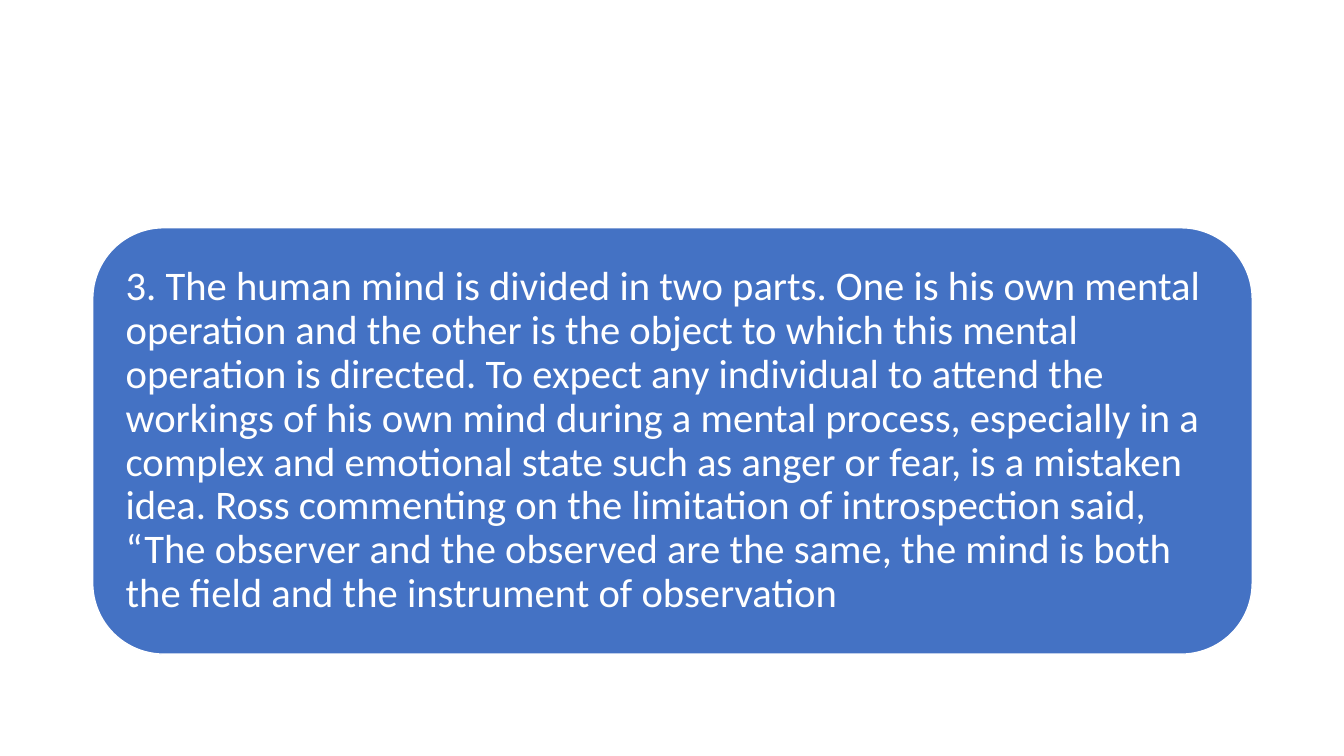
from pptx import Presentation
from pptx import util as u
from pptx.dml.color import RGBColor
from pptx.enum import shapes, text

BLUE = RGBColor(0x44, 0x72, 0xC4)
WHITE = RGBColor(0xFF, 0xFF, 0xFF)

LIMITATION = (
    "3. The human mind is divided in two parts. One is his own mental operation "
    "and the other is the object to which this mental operation is directed. "
    "To expect any individual to attend the workings of his own mind during a "
    "mental process, especially in a complex and emotional state such as anger "
    "or fear, is a mistaken idea. Ross commenting on the limitation of "
    "introspection said, “The observer and the observed are the same, the mind "
    "is both the field and the instrument of observation"
)


def apply(target, values):
    for name, value in values.items():
        setattr(target, name, value)


class SlideBuilder:
    frame_format = {
        "word_wrap": True,
        "vertical_anchor": text.MSO_ANCHOR.MIDDLE,
        **{f"margin_{side}": u.Inches(0.12) for side in ("left", "top", "right", "bottom")},
    }
    para_format = {"alignment": text.PP_ALIGN.LEFT, "line_spacing": 0.9}
    font_format = {"name": "Calibri", "size": u.Pt(29)}

    def __init__(self, page):
        self.page = page

    def rounded_box(self, left, top, width, height, wording):
        box = self.page.shapes.add_shape(
            shapes.MSO_SHAPE.ROUNDED_RECTANGLE,
            u.Inches(left), u.Inches(top), u.Inches(width), u.Inches(height),
        )
        box.shadow.inherit = False
        box.fill.solid()
        box.fill.fore_color.rgb = BLUE
        box.line.color.rgb = WHITE
        box.line.width = u.Pt(1)
        apply(box.text_frame, self.frame_format)
        para = box.text_frame.paragraphs[0]
        apply(para, self.para_format)
        span = para.add_run()
        span.text = wording
        apply(span.font, self.font_format)
        span.font.color.rgb = WHITE


def main():
    deck = Presentation()
    deck.slide_width = u.Inches(13.33)
    deck.slide_height = u.Inches(7.5)
    builder = SlideBuilder(deck.slides.add_slide(deck.slide_layouts[6]))
    builder.rounded_box(0.92, 2.26, 11.5, 4.23, LIMITATION)
    deck.save("out.pptx")


if __name__ == "__main__":
    main()
